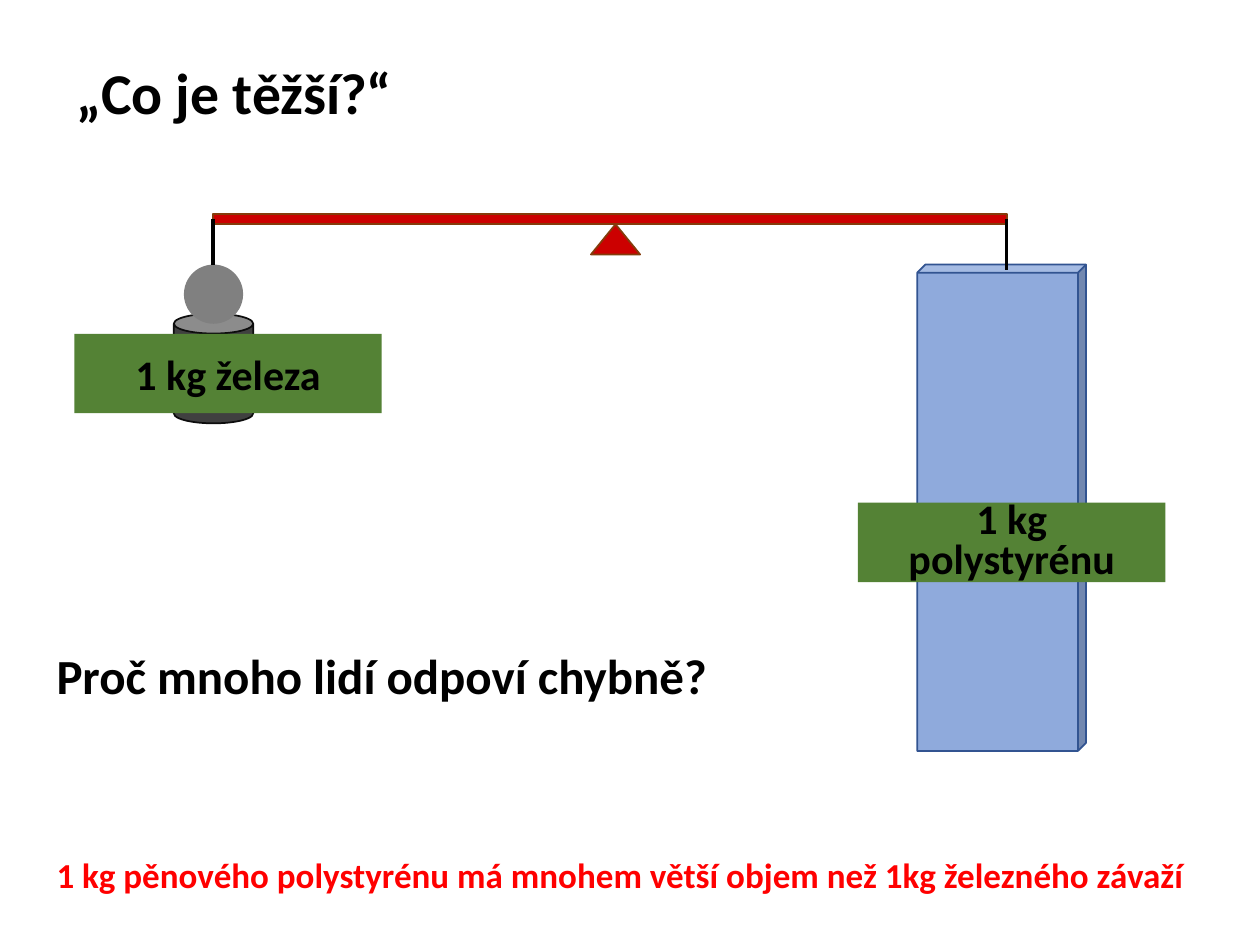
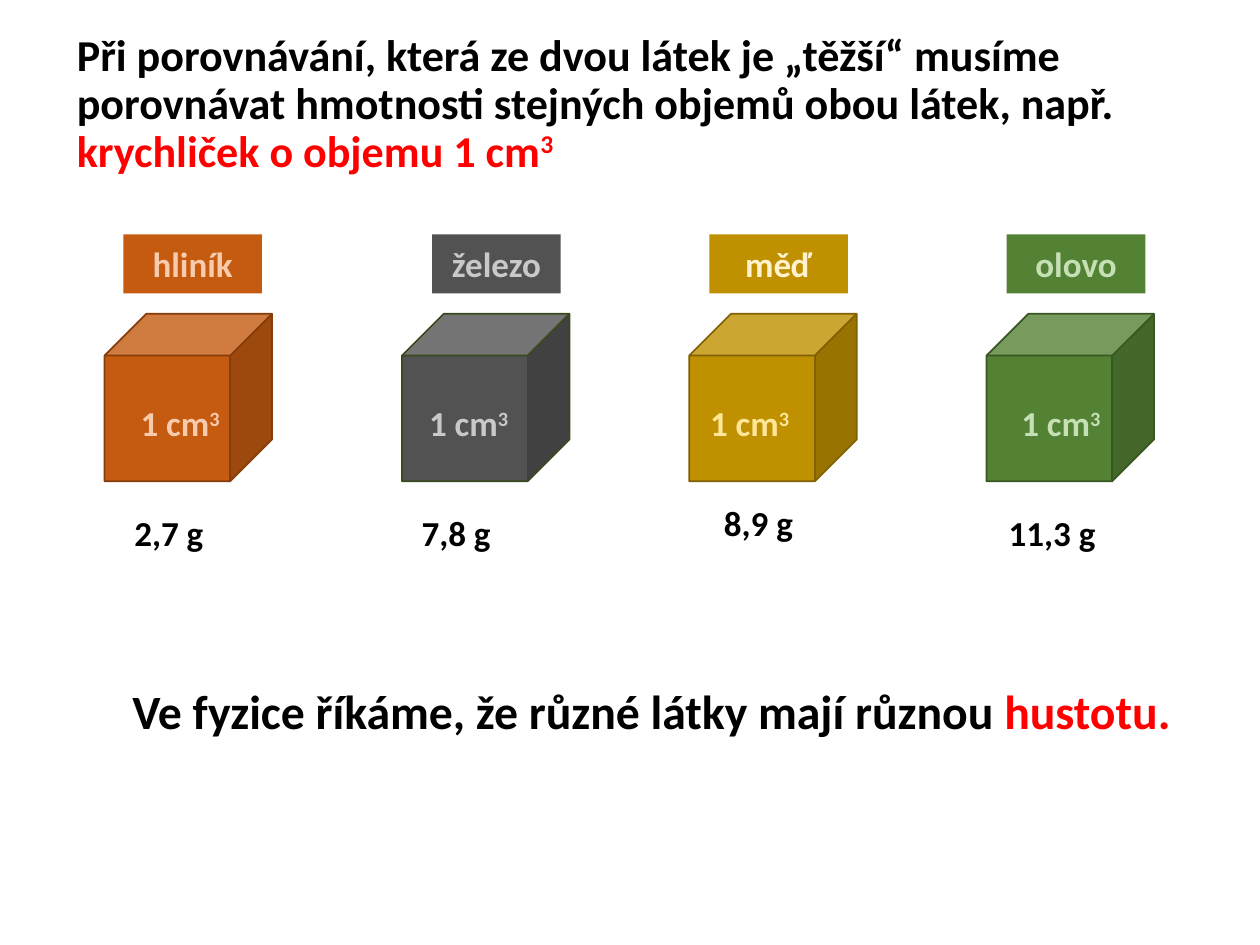
from dataclasses import dataclass

from lxml import etree
from pptx import Presentation
from pptx.dml.color import RGBColor
from pptx.enum.shapes import MSO_CONNECTOR, MSO_SHAPE
from pptx.enum.text import MSO_ANCHOR, MSO_AUTO_SIZE, PP_ALIGN
from pptx.oxml.ns import qn
from pptx.util import Inches, Pt

LEFT, CENTER = PP_ALIGN.LEFT, PP_ALIGN.CENTER
MIDDLE, NO_AUTOFIT = MSO_ANCHOR.MIDDLE, MSO_AUTO_SIZE.NONE
RECTANGLE, CUBE, CAN = MSO_SHAPE.RECTANGLE, MSO_SHAPE.CUBE, MSO_SHAPE.CAN
TRIANGLE, BALL = MSO_SHAPE.ISOSCELES_TRIANGLE, MSO_SHAPE.OVAL
STRAIGHT = MSO_CONNECTOR.STRAIGHT
TITLE_ONLY = 5


@dataclass(frozen=True)
class Theme:
    font: str = "Calibri"
    black: str = "000000"
    red: str = "FF0000"
    white: str = "FFFFFF"
    beam: str = "CC0000"
    brown: str = "843C0B"
    green: str = "548235"
    foam: str = "8FAADC"
    foam_edge: str = "325491"
    iron: str = "404040"
    iron_edge: str = "0D0D0D"
    iron_knob: str = "808080"
    title: float = 33
    long_title: float = 25.2
    question: float = 28
    conclusion: float = 27.3
    weight: float = 24
    label: float = 20


THEME = Theme()

# Content: a run is (text, colour) or (text, colour, is superscript)
SCALE_TITLE = [("„Co je těžší?“", THEME.black)]
SCALE_LABELS = [
    ("1 kg železa", (0.59, 2.65), 1.0),
    ("1 kg polystyrénu", (6.81, 3.99), 0.8),
]
QUESTION = [("Proč mnoho lidí odpoví chybně?", THEME.black)]
ANSWER = [("1 kg pěnového polystyrénu má mnohem větší objem než "
           "1kg železného závaží", THEME.red)]

DENSITY_TITLE = [
    ("Při porovnávání, která ze dvou látek je „těžší“ musíme porovnávat "
     "hmotnosti stejných objemů obou látek, např. ", THEME.black),
    ("krychliček o objemu 1 cm", THEME.red),
    ("3", THEME.red, True),
]
CONCLUSION = [("Ve fyzice říkáme, že různé látky mají různou ", THEME.black),
              ("hustotu.", THEME.red)]
MATERIALS = [
    dict(name="hliník", mass="2,7 g", fill="C55A11", edge="843C0B",
         name_color="F8CBAD", volume_color="F8CBAD", cube_left=0.83,
         name_box=(0.98, 1.1), volume_center=1.43, mass_box=(0.75, 3.91)),
    dict(name="železo", mass="7,8 g", fill="525252", edge="3B4A1E",
         name_color="C9C9C9", volume_color="C9C9C9", cube_left=3.19,
         name_box=(3.43, 1.02), volume_center=3.72, mass_box=(3.03, 3.91)),
    dict(name="měď", mass="8,9 g", fill="BF9000", edge="806000",
         name_color="FFF2CC", volume_color="FFE699", cube_left=5.47,
         name_box=(5.63, 1.1), volume_center=5.95, mass_box=(5.43, 3.83)),
    dict(name="olovo", mass="11,3 g", fill=THEME.green, edge="385723",
         name_color="C5E0B4", volume_color="C5E0B4", cube_left=7.83,
         name_box=(7.99, 1.1), volume_center=8.42, mass_box=(7.76, 3.91)),
]
CUBE_TOP, CUBE_SIZE = 2.49, 1.33
NAME_TOP, NAME_HEIGHT = 1.86, 0.47
VOLUME_TOP = 3.04
VALUE_WIDTH, VALUE_HEIGHT = 1.18, 0.63
SCALE_LABEL_SIZE = (2.44, 0.63)
BEAM_LEFT, BEAM_RIGHT, BEAM_TOP, BEAM_THICKNESS = 1.69, 7.99, 1.7, 0.08


# Shared helpers
def color(value):
    return RGBColor.from_string(value)


def write(shape, runs, size, alignment=LEFT, line_spacing=1.0):
    frame = shape.text_frame
    frame_format = dict(word_wrap=True, auto_size=NO_AUTOFIT,
                        vertical_anchor=MIDDLE)
    for name, value in frame_format.items():
        setattr(frame, name, value)
    paragraph = frame.paragraphs[0]
    paragraph.alignment = alignment
    paragraph.line_spacing = line_spacing
    for text, text_color, *superscript in runs:
        run = paragraph.add_run()
        run.text = text
        for name, value in dict(name=THEME.font, size=Pt(size), bold=True).items():
            setattr(run.font, name, value)
        run.font.color.rgb = color(text_color)
        if superscript:
            run._r.get_or_add_rPr().set("baseline", "30000")


def add_shape(slide, kind, box, fill, edge=None):
    shape = slide.shapes.add_shape(kind, *map(Inches, box))
    shape.shadow.inherit = False
    shape.fill.solid()
    shape.fill.fore_color.rgb = color(fill)
    if edge:
        shape.line.color.rgb = color(edge)
        shape.line.width = Pt(1)
    else:
        shape.line.fill.background()
    return shape


def add_text(slide, box, runs, size, alignment=LEFT):
    write(slide.shapes.add_textbox(*map(Inches, box)), runs, size, alignment)


def add_string(slide, x, top, bottom):
    string = slide.shapes.add_connector(
        STRAIGHT, *map(Inches, (x, top, x, bottom)))
    string.line.color.rgb = color(THEME.black)
    string.line.width = Pt(2)
    etree.SubElement(string._element.spPr, qn("a:effectLst"))


def add_titled_slide(presentation, runs, size, height):
    slide = presentation.slides.add_slide(presentation.slide_layouts[TITLE_ONLY])
    title = slide.shapes.title
    place = dict(left=0.51, top=0.21, width=9, height=height)
    for name, value in place.items():
        setattr(title, name, Inches(value))
    write(title, runs, size, line_spacing=0.9)
    return slide


# Slide 1: iron and polystyrene on a balance
def build_scale_slide(presentation):
    slide = add_titled_slide(presentation, SCALE_TITLE, THEME.title, 1.1)
    beam_middle = BEAM_TOP + BEAM_THICKNESS / 2
    beam_bottom = BEAM_TOP + BEAM_THICKNESS

    add_shape(slide, CAN, (1.38, 2.49, 0.63, 0.87), THEME.iron, THEME.iron_edge)
    add_shape(slide, RECTANGLE,
              (BEAM_LEFT, BEAM_TOP, BEAM_RIGHT - BEAM_LEFT, BEAM_THICKNESS),
              THEME.beam, THEME.brown)
    add_shape(slide, TRIANGLE, (4.69, beam_bottom, 0.39, 0.24),
              THEME.beam, THEME.brown)
    add_shape(slide, BALL, (1.46, 2.1, 0.47, 0.47), THEME.iron_knob)
    add_string(slide, BEAM_LEFT, beam_middle, 2.1)
    foam = add_shape(slide, CUBE, (7.28, 2.1, 1.34, 3.86),
                     THEME.foam, THEME.foam_edge)
    foam.adjustments[0] = 0.048
    add_string(slide, BEAM_RIGHT, beam_middle, 2.14)

    add_text(slide, (0.35, 4.73, 6.85, 1.25), QUESTION, THEME.question)
    for text, position, line_spacing in SCALE_LABELS:
        label = add_shape(slide, RECTANGLE, position + SCALE_LABEL_SIZE, THEME.green)
        write(label, [(text, THEME.black)], THEME.weight, CENTER, line_spacing)
    add_text(slide, (0.35, 6.51, 9.45, 0.86), ANSWER, THEME.label)


# Slide 2: equal cubes of four metals
def add_material(slide, material):
    fill = material["fill"]
    add_shape(slide, CUBE,
              (material["cube_left"], CUBE_TOP, CUBE_SIZE, CUBE_SIZE),
              fill, material["edge"])

    name_left, name_width = material["name_box"]
    name = add_shape(slide, RECTANGLE,
                     (name_left, NAME_TOP, name_width, NAME_HEIGHT), fill)
    write(name, [(material["name"], material["name_color"])], THEME.label, CENTER)

    value_size = (VALUE_WIDTH, VALUE_HEIGHT)
    volume_left = material["volume_center"] - VALUE_WIDTH / 2
    volume_color = material["volume_color"]
    add_text(slide, (volume_left, VOLUME_TOP) + value_size,
             [("1 cm", volume_color), ("3", volume_color, True)],
             THEME.label, CENTER)
    add_text(slide, material["mass_box"] + value_size,
             [(material["mass"], THEME.black)], THEME.label, CENTER)


def build_density_slide(presentation):
    slide = add_titled_slide(presentation, DENSITY_TITLE, THEME.long_title, 1.25)
    for material in MATERIALS:
        add_material(slide, material)
    conclusion = add_shape(slide, RECTANGLE, (0.59, 5.01, 9.16, 1.25), THEME.white)
    write(conclusion, CONCLUSION, THEME.conclusion, CENTER)


def main():
    presentation = Presentation()
    presentation.slide_width = Inches(10)
    presentation.slide_height = Inches(7.5)
    build_scale_slide(presentation)
    build_density_slide(presentation)
    presentation.save("out.pptx")


if __name__ == "__main__":
    main()
